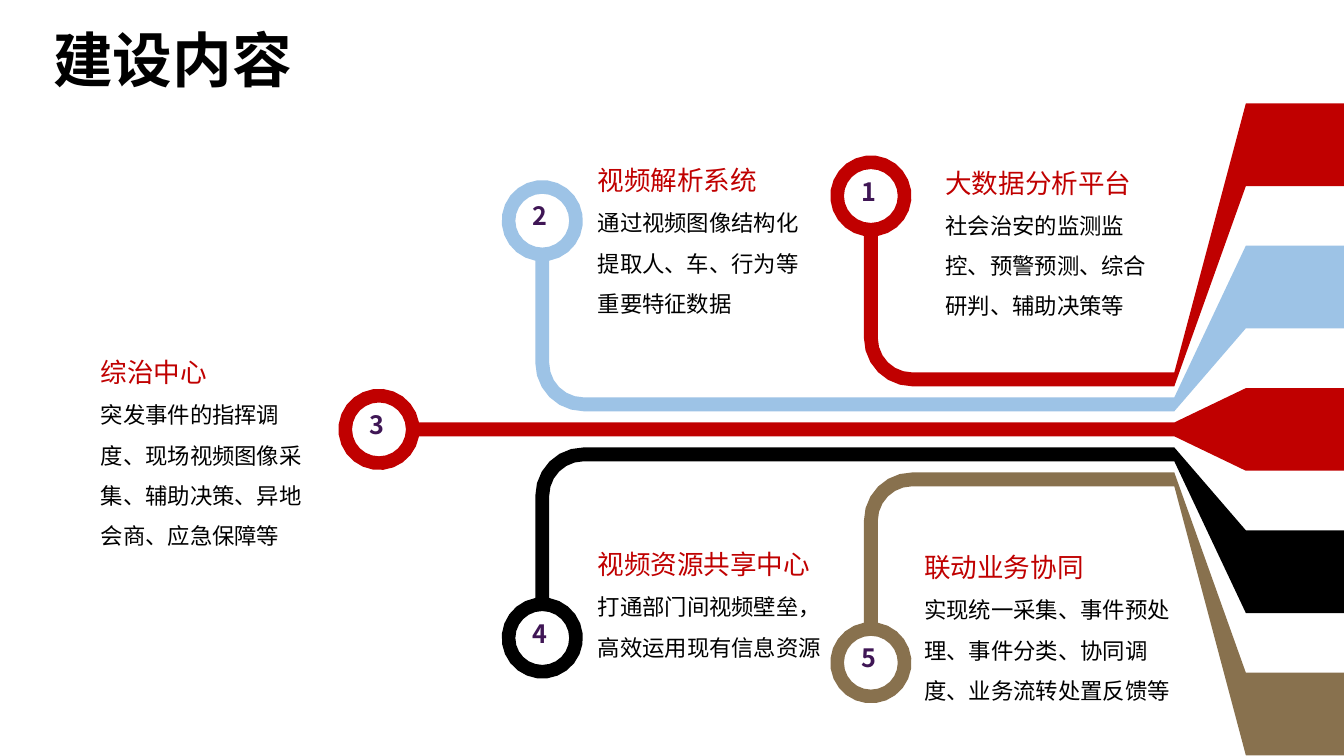
import math

import pptx
import pptx.dml.color
import pptx.enum.text
import pptx.oxml.ns
import pptx.util
from lxml import etree

COLORS = {"red": "C00000", "blue": "9DC3E6", "black": "000000",
          "tan": "88714E", "plum": "3F1655"}
COLS, ROWS = 133.33, 75   # grid cells of a tenth of an inch
MID = 42.6                # row on which the fan of ribbons is mirrored
RING, HOLE, STEM = 4.03, 2.67, 0.69
BEND = 4.1                # from the stem's axis to the centre of the bend
JOIN, BAND = 116.5, 123.6  # columns where the rail ends and the band starts


def arc(x, y, r, start, end):
    """Points on a circle; degrees run clockwise from the right."""
    steps = round(abs(end - start) / 15)
    turns = [math.radians(start + (end - start) * i / steps)
             for i in range(steps + 1)]
    return [(x + r * math.cos(t), y + r * math.sin(t)) for t in turns]


class Deck:
    font = "Noto Sans CJK SC"

    def __init__(self):
        self.show = pptx.Presentation()
        self.show.slide_width = self.cell(COLS)
        self.show.slide_height = self.cell(ROWS)
        self.slide = self.show.slides.add_slide(self.show.slide_layouts[6])

    def cell(self, count):
        return pptx.util.Inches(count / 10)

    def color(self, name):
        return pptx.dml.color.RGBColor.from_string(COLORS[name])

    def outline(self, loops, color):
        """Draw closed loops as one shape; a second loop cuts a hole."""
        loops = [[(self.cell(x), self.cell(y)) for x, y in loop]
                 for loop in loops]
        pen = self.slide.shapes.build_freeform(*loops[0][0], scale=1.0)
        pen.add_line_segments(loops[0][1:], close=True)
        for loop in loops[1:]:
            pen.move_to(*loop[0])
            pen.add_line_segments(loop[1:], close=True)
        shape = pen.convert_to_shape()
        shape.shadow.inherit = False
        shape.fill.solid()
        shape.fill.fore_color.rgb = self.color(color)
        shape.line.fill.background()

    def ribbon(self, rank, x, rise, color):
        """Rank runs from -2 (top) to 2; rise is the ring's distance from MID."""
        side = 1 if rank > 0 else -1
        depth = abs(rank)
        near, far = 2.48 * depth - STEM, 2.48 * depth + STEM
        low, high = 14.12 * depth - 4.1, 14.12 * depth + 4.1
        gap = math.degrees(math.asin(STEM / RING))
        ring = (x, -rise, RING)
        if depth:
            hub = x + BEND, -far - BEND + STEM
            body = (arc(*hub, BEND - STEM, 90, 180)
                    + arc(*ring, 90 - gap, gap - 270)
                    + arc(*hub, BEND + STEM, 180, 90))
        else:
            body = arc(*ring, -gap, gap - 360)
        loop = [(COLS, -high), (BAND, -high), (JOIN, -far), *body,
                (JOIN, -near), (BAND, -low), (COLS, -low)]
        hole = arc(x, -rise, HOLE, 0, 360)[:-1]
        self.outline([[(a, MID - side * b) for a, b in part]
                      for part in (loop, hole)], color)
        self.badge(str(rank + 3), x, MID + side * rise)

    def text(self, box, lines, inset=(0, 0), wrap=True, grow=True):
        """Each line is (words, size, colour, bold, spacing)."""
        frame = self.slide.shapes.add_textbox(*map(self.cell, box)).text_frame
        frame.word_wrap = wrap
        frame.margin_left = frame.margin_right = self.cell(inset[0])
        frame.margin_top = frame.margin_bottom = self.cell(inset[1])
        fit = pptx.enum.text.MSO_AUTO_SIZE
        frame.auto_size = fit.SHAPE_TO_FIT_TEXT if grow else fit.NONE
        frame.text = "\n".join(line[0] for line in lines)
        for para, (_, size, color, bold, space) in zip(frame.paragraphs, lines):
            para.line_spacing = space
            para._p.get_or_add_pPr().set("hangingPunct", "0")
            for run in para.runs:
                run.font.size = pptx.util.Pt(size)
                run.font.bold = bold
                run.font.color.rgb = self.color(color)
                run.font.name = self.font
                east = etree.SubElement(run.font._element,
                                        pptx.oxml.ns.qn("a:ea"))
                east.set("typeface", self.font)
        return frame

    def badge(self, digit, x, y):
        self.text((x - 2.25, y - 2.7, 4.3, 4.4),
                  [(digit, 18, "plum", True, 1.0)], (1.3, 0.7), wrap=False)

    def note(self, box, head, body, space):
        self.text(box, [(head, 19, "red", False, space),
                        (body, 16, "black", False, 1.5)])

    def title(self, words):
        frame = self.text((4.3, 2.4, 116.1, 7.7),
                          [(words, 42.6, "black", True, 0.9)],
                          (1, 0.5), grow=False)
        frame.vertical_anchor = pptx.enum.text.MSO_ANCHOR.MIDDLE


RIBBONS = [  # rank, ring column, ring rise, colour
    (-2, 86.4, 23.15, "red"),
    (-1, 53.8, 20.7, "blue"),
    (0, 37.6, 0, "red"),
    (1, 53.8, 20.7, "black"),
    (2, 86.4, 23.15, "tan"),
]
NOTES = [  # box, head, body, spacing of the head
    ((93.8, 14.95, 22, 16.9), "大数据分析平台",
     "社会治安的监测监控、预警预测、综合研判、辅助决策等", 1.5),
    ((59.3, 15.65, 22, 16), "视频解析系统",
     "通过视频图像结构化提取人、车、行为等重要特征数据", 1.2),
    ((10, 34.7, 22, 20), "综治中心",
     "突发事件的指挥调度、现场视频图像采集、辅助决策、异地会商、应急保障等", 1.2),
    ((59.3, 52.8, 23.1, 16.9), "视频资源共享中心",
     "打通部门间视频壁垒，高效运用现有信息资源", 1.5),
    ((91.7, 53.1, 26.5, 16.9), "联动业务协同",
     "实现统一采集、事件预处理、事件分类、协同调度、业务流转处置反馈等", 1.5),
]


def main():
    deck = Deck()
    for ribbon in RIBBONS:
        deck.ribbon(*ribbon)
    for note in NOTES:
        deck.note(*note)
    deck.title("建设内容")
    deck.show.save("out.pptx")


if __name__ == "__main__":
    main()
